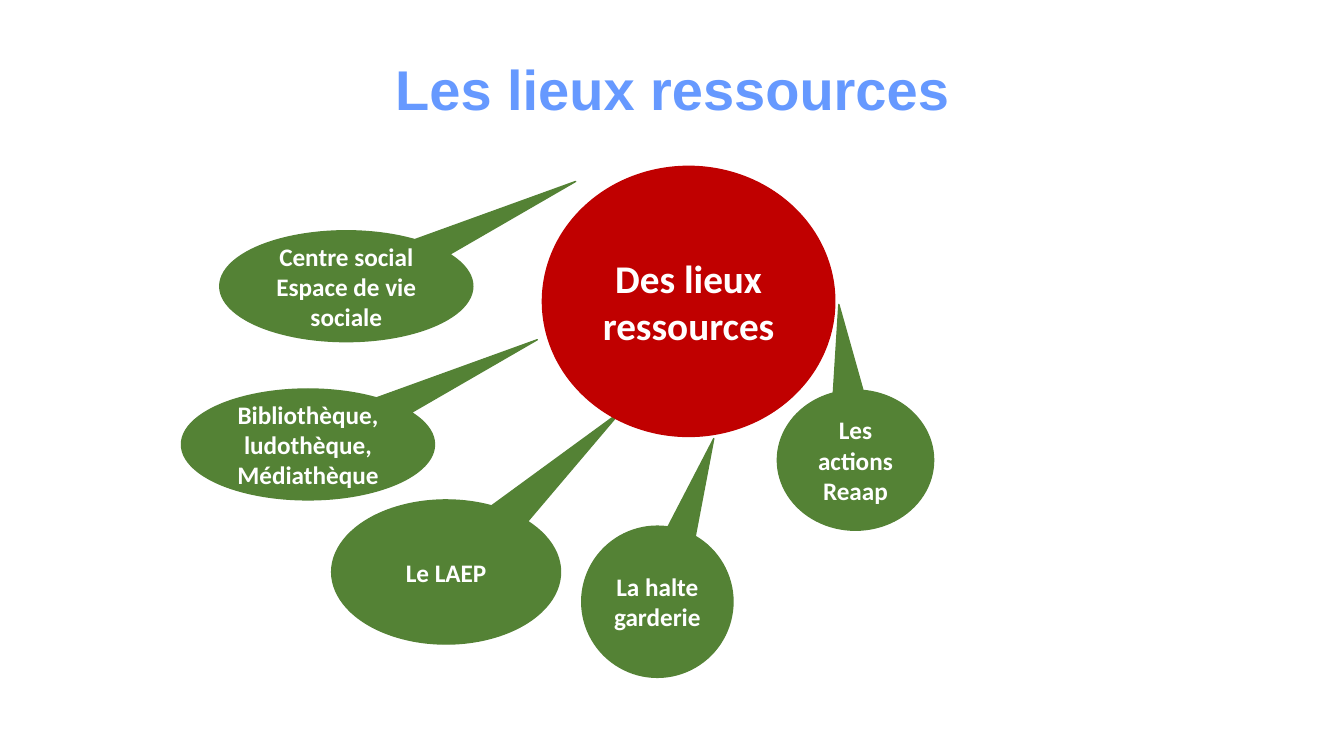
from dataclasses import dataclass

from pptx import Presentation
from pptx.dml.color import RGBColor
from pptx.enum.shapes import MSO_SHAPE
from pptx.enum.text import MSO_ANCHOR, PP_ALIGN
from pptx.util import Inches, Pt


@dataclass(frozen=True)
class Theme:
    """Colours, fonts and type sizes of the slide."""
    title_color: str = "6699FF"
    hub_color: str = "C00000"
    place_color: str = "548235"
    text_color: str = "FFFFFF"
    title_font: str = "Arial"
    body_font: str = "Calibri"
    title_size: int = 40
    hub_size: int = 28
    place_size: int = 18


THEME = Theme()

TITLE_BOX = (1.84, 0.49, 9.65, 0.77)
HUB_BOX = (5.38, 1.65, 2.9, 2.68)
PLACES = [
    (["Les actions Reaap"], (7.71, 3.87, 1.55, 1.39), (8.32, 3.02)),
    (["La halte garderie"], (5.77, 5.22, 1.5, 1.5), (7.08, 4.35)),
    (["Le LAEP"], (3.29, 4.96, 2.27, 1.43), (6.16, 4.08)),
    (["Bibliothèque, ludothèque, Médiathèque"], (1.8, 3.86, 2.51, 1.1), (5.33, 3.37)),
    (["Centre social", "Espace de vie sociale"], (2.18, 2.29, 2.51, 1.1), (5.71, 1.8)),
]


def write_text(frame, lines, *, font, size, color, anchor=MSO_ANCHOR.MIDDLE):
    """Fill a text frame with bold centred paragraphs."""
    frame.word_wrap = True
    frame.vertical_anchor = anchor
    for index, line in enumerate(lines):
        para = frame.paragraphs[0] if index == 0 else frame.add_paragraph()
        para.alignment = PP_ALIGN.CENTER
        span = para.add_run()
        span.text = line
        span.font.name = font
        span.font.size = Pt(size)
        span.font.bold = True
        span.font.color.rgb = RGBColor.from_string(color)


def add_bubble(page, kind, box, lines, *, color, size):
    """Add a plain filled shape with its text and return it."""
    bubble = page.shapes.add_shape(kind, *map(Inches, box))
    bubble.shadow.inherit = False
    bubble.fill.solid()
    bubble.fill.fore_color.rgb = RGBColor.from_string(color)
    bubble.line.color.rgb = RGBColor.from_string(color)
    bubble.line.width = Pt(1)
    write_text(bubble.text_frame, lines, font=THEME.body_font, size=size,
               color=THEME.text_color)
    return bubble


def add_title(page, box):
    """Add the slide heading."""
    heading = page.shapes.add_textbox(*map(Inches, box))
    write_text(heading.text_frame, ["Les lieux ressources"], font=THEME.title_font,
               size=THEME.title_size, color=THEME.title_color, anchor=MSO_ANCHOR.TOP)


def add_hub(page, box):
    """Add the central ellipse."""
    add_bubble(page, MSO_SHAPE.OVAL, box, ["Des lieux", "ressources"],
               color=THEME.hub_color, size=THEME.hub_size)


def add_place(page, box, lines, tip):
    """Add a callout in its box whose tail ends at the tip."""
    left, top, width, height = box
    callout = add_bubble(page, MSO_SHAPE.OVAL_CALLOUT, box, lines,
                         color=THEME.place_color, size=THEME.place_size)
    callout.adjustments[0] = (tip[0] - left) / width - 0.5
    callout.adjustments[1] = (tip[1] - top) / height - 0.5
    callout.text_frame.margin_left = callout.text_frame.margin_right = Inches(0.05)


def main():
    """Build and save the deck."""
    deck = Presentation()
    deck.slide_width, deck.slide_height = Inches(13.33), Inches(7.5)
    page = deck.slides.add_slide(deck.slide_layouts[6])
    add_title(page, TITLE_BOX)
    for lines, box, tip in PLACES:
        add_place(page, box, lines, tip)
    add_hub(page, HUB_BOX)
    deck.save("out.pptx")


if __name__ == "__main__":
    main()
